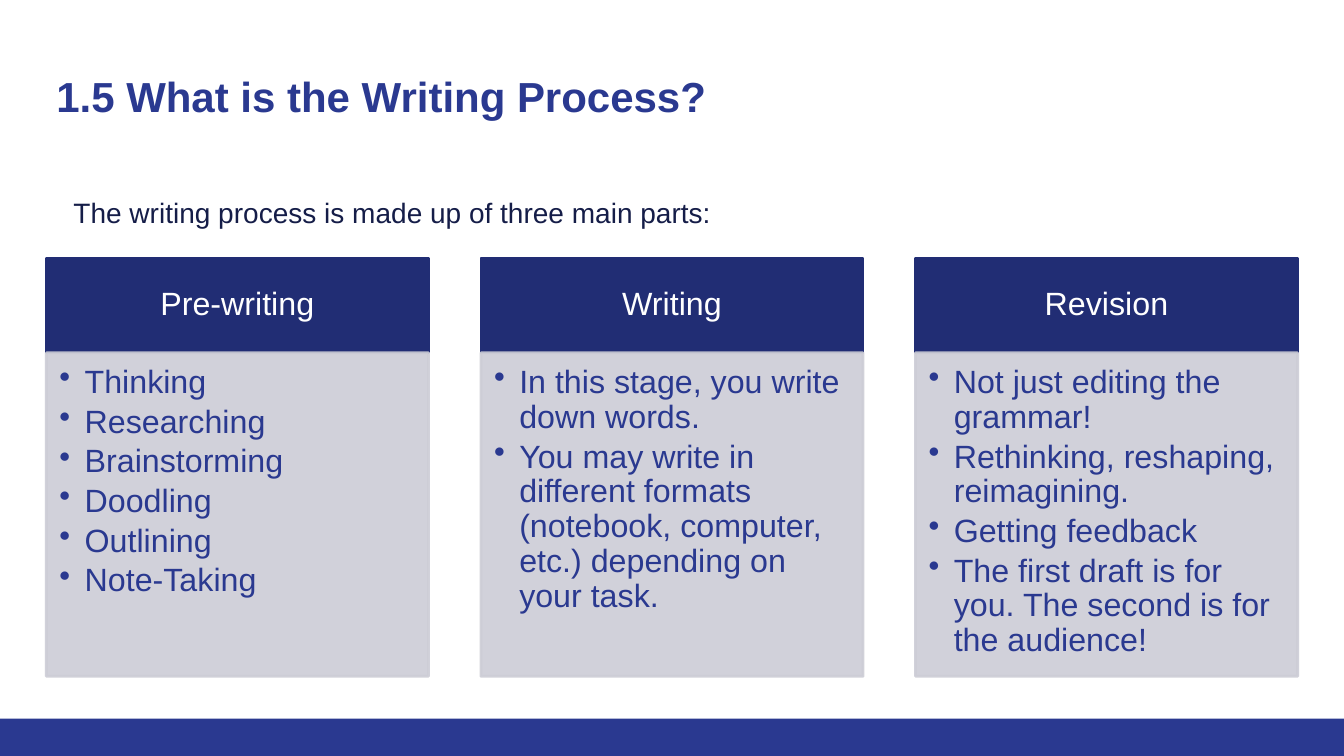
from dataclasses import dataclass

from lxml.etree import SubElement
from pptx import Presentation
from pptx.dml.color import RGBColor
from pptx.enum.shapes import MSO_SHAPE
from pptx.enum.text import MSO_ANCHOR, PP_ALIGN
from pptx.oxml.ns import qn
from pptx.shapes.autoshape import Shape
from pptx.slide import Slide
from pptx.util import Inches, Pt

RECT = MSO_SHAPE.RECTANGLE
TOP, MIDDLE = MSO_ANCHOR.TOP, MSO_ANCHOR.MIDDLE
LEFT, CENTER = PP_ALIGN.LEFT, PP_ALIGN.CENTER


@dataclass(frozen=True)
class Theme:
    font: str = "Arial"
    blue: str = "2A3990"
    navy: str = "212D74"
    ink: str = "151D48"
    gray: str = "CDCDD6"
    white: str = "FFFFFF"
    title: int = 30
    intro: int = 20
    card: int = 23
    edge: int = 2


@dataclass(frozen=True)
class Grid:
    width: float = 13.33
    height: float = 7.5
    margin: float = 0.46
    column: float = 3.79
    count: int = 3
    head: float = 2.56
    body: float = 3.5
    end: float = 6.71
    foot: float = 7.13

    @property
    def inner(self) -> float:
        return self.width - 2 * self.margin

    def left(self, index: int) -> float:
        step = (self.inner - self.column) / (self.count - 1)
        return self.margin + index * step


@dataclass(frozen=True)
class Box:
    left: float
    top: float
    width: float
    height: float

    def place(self) -> tuple[int, ...]:
        return tuple(Inches(n) for n in (self.left, self.top, self.width, self.height))


@dataclass(frozen=True)
class Style:
    size: int
    color: str
    bold: bool = False
    align: PP_ALIGN = LEFT
    anchor: MSO_ANCHOR = TOP
    inset: tuple[float, ...] = (0.1, 0.1, 0.1, 0.1)
    indent: float = 0
    bullet: bool = False
    line: float = 1.0
    after: float = 0


@dataclass(frozen=True)
class Card:
    name: str
    points: tuple[str, ...]


THEME = Theme()
GRID = Grid()
TITLE = Style(THEME.title, THEME.blue, bold=True)
INTRO = Style(THEME.intro, THEME.ink, indent=0.17, line=1.15)
HEAD = Style(THEME.card, THEME.white, align=CENTER, anchor=MIDDLE,
             inset=(0.18, 0.1, 0.18, 0.1), line=0.9)
BODY = Style(THEME.card, THEME.blue, inset=(0.13, 0.13, 0.18, 0.2),
             indent=0.25, bullet=True, line=0.9, after=3.45)
CARDS = (
    Card("Pre-writing", ("Thinking", "Researching", "Brainstorming",
                         "Doodling", "Outlining", "Note-Taking")),
    Card("Writing", (
        "In this stage, you write down words.",
        "You may write in different formats (notebook, computer, etc.) "
        "depending on your task.")),
    Card("Revision", (
        "Not just editing the grammar!",
        "Rethinking, reshaping, reimagining.",
        "Getting feedback",
        "The first draft is for you. The second is for the audience!")),
)


def write(shape: Shape, lines: tuple[str, ...], style: Style) -> None:
    frame = shape.text_frame
    frame.word_wrap = True
    frame.vertical_anchor = style.anchor
    (frame.margin_left, frame.margin_top,
     frame.margin_right, frame.margin_bottom) = map(Inches, style.inset)
    for index, line in enumerate(lines):
        para = frame.add_paragraph() if index else frame.paragraphs[0]
        props = para._p.get_or_add_pPr()
        props.set("marL", str(Inches(style.indent)))
        if style.bullet:
            props.set("indent", str(-Inches(style.indent)))
            SubElement(props, qn("a:buChar"), char="•")
        para.alignment = style.align
        para.line_spacing = style.line
        para.space_after = Pt(style.after)
        run = para.add_run()
        run.text = line
        run.font.name = THEME.font
        run.font.size = Pt(style.size)
        run.font.bold = style.bold
        run.font.color.rgb = RGBColor.from_string(style.color)


def label(slide: Slide, box: Box, text: str, style: Style) -> None:
    write(slide.shapes.add_textbox(*box.place()), (text,), style)


def panel(slide: Slide, box: Box, color: str, edge: int = 0, alpha: int = 100) -> Shape:
    shape = slide.shapes.add_shape(RECT, *box.place())
    shape.shadow.inherit = False
    shape.fill.solid()
    shape.fill.fore_color.rgb = RGBColor.from_string(color)
    if edge:
        shape.line.color.rgb = RGBColor.from_string(color)
        shape.line.width = Pt(edge)
    else:
        shape.line.fill.background()
    if alpha < 100:
        for tint in shape.element.spPr.iter(qn("a:srgbClr")):
            SubElement(tint, qn("a:alpha"), val=str(alpha * 1000))
    return shape


def draw(slide: Slide, card: Card, left: float) -> None:
    head = Box(left, GRID.head, GRID.column, GRID.body - GRID.head)
    body = Box(left, GRID.body, GRID.column, GRID.end - GRID.body)
    write(panel(slide, head, THEME.navy, THEME.edge), (card.name,), HEAD)
    write(panel(slide, body, THEME.gray, THEME.edge, 90), card.points, BODY)


def main() -> None:
    deck = Presentation()
    deck.slide_width = Inches(GRID.width)
    deck.slide_height = Inches(GRID.height)
    slide = deck.slides.add_slide(deck.slide_layouts[6])
    panel(slide, Box(0, GRID.foot, GRID.width, GRID.height - GRID.foot), THEME.blue)
    label(slide, Box(GRID.margin, 0.6, GRID.inner, 0.89),
          "1.5 What is the Writing Process?", TITLE)
    label(slide, Box(GRID.margin, 1.79, GRID.inner, 0.76),
          "The writing process is made up of three main parts:", INTRO)
    for index, card in enumerate(CARDS):
        draw(slide, card, GRID.left(index))
    deck.save("out.pptx")


if __name__ == "__main__":
    main()
